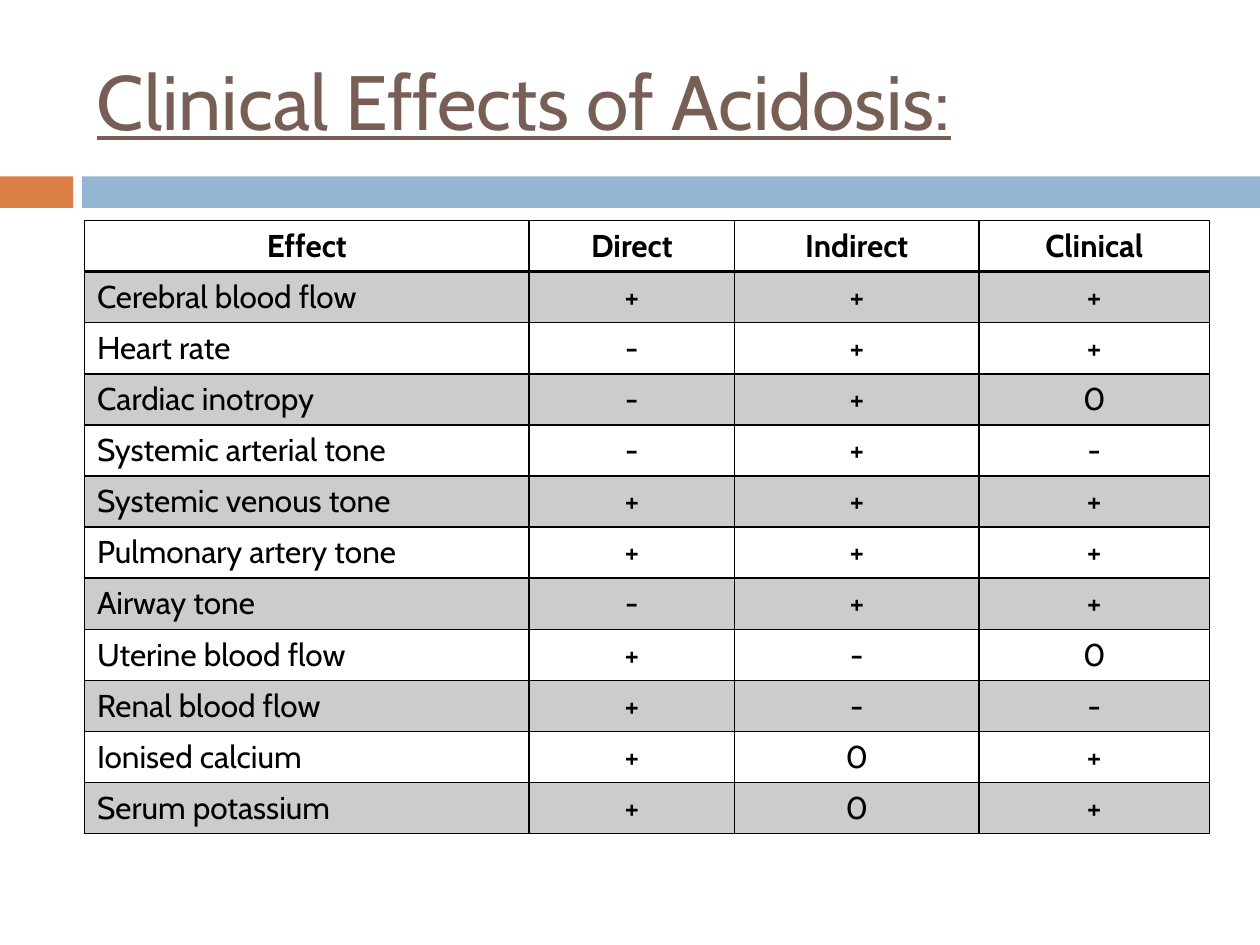
import pptx
import pptx.dml.color
import pptx.enum.shapes
import pptx.enum.text
import pptx.oxml
import pptx.oxml.ns
import pptx.util
from lxml import etree

Inches, Pt = pptx.util.Inches, pptx.util.Pt
RGBColor = pptx.dml.color.RGBColor
ALIGN = pptx.enum.text.PP_ALIGN
MIDDLE = pptx.enum.text.MSO_ANCHOR.MIDDLE
qn = pptx.oxml.ns.qn

BLACK = RGBColor(0x00, 0x00, 0x00)
BROWN = RGBColor(0x77, 0x5F, 0x55)
ORANGE = RGBColor(0xDD, 0x80, 0x47)
BLUE = RGBColor(0x94, 0xB6, 0xD2)

HEADINGS = ("Effect", "Direct", "Indirect", "Clinical")
EFFECTS = [
    ("Cerebral blood flow", "+++"),
    ("Heart rate", "-++"),
    ("Cardiac inotropy", "-+0"),
    ("Systemic arterial tone", "-+-"),
    ("Systemic venous tone", "+++"),
    ("Pulmonary artery tone", "+++"),
    ("Airway tone", "-++"),
    ("Uterine blood flow", "+-0"),
    ("Renal blood flow", "+--"),
    ("Ionised calcium", "+0+"),
    ("Serum potassium", "+0+"),
]
COLUMN_WIDTHS = (3.53, 1.63, 1.94, 1.83)
TABLE_HEIGHT = 4.87
BAND_OPACITY = 20  # percent


class SlideBuilder:
    font_name = "Cabin"

    def __init__(self, slide):
        self.slide = slide

    def add_text(self, frame, text, size, color, align=ALIGN.LEFT, **formats):
        para = frame.paragraphs[0]
        para.alignment = align
        span = para.add_run()
        span.text = text
        span.font.color.rgb = color
        formats.update(name=self.font_name, size=Pt(size))
        for name, value in formats.items():
            setattr(span.font, name, value)

    def bar(self, left, top, width, height, color):
        box = self.slide.shapes.add_shape(
            pptx.enum.shapes.MSO_SHAPE.RECTANGLE,
            Inches(left), Inches(top), Inches(width), Inches(height))
        box.shadow.inherit = False
        box.fill.solid()
        box.fill.fore_color.rgb = color
        box.line.fill.background()

    def title(self, left, top, width, height, text):
        box = self.slide.shapes.add_textbox(
            Inches(left), Inches(top), Inches(width), Inches(height))
        box.text_frame.word_wrap = True
        box.text_frame.vertical_anchor = MIDDLE
        self.add_text(box.text_frame, text, 44, BROWN, underline=True)

    def borders(self, cell, widths):
        properties = cell._tc.get_or_add_tcPr()
        for index, (side, width) in enumerate(widths.items()):
            line = etree.Element(qn(f"a:ln{side}"), w=str(Pt(width)))
            fill = etree.SubElement(line, qn("a:solidFill"))
            etree.SubElement(fill, qn("a:srgbClr"), val=str(BLACK))
            properties.insert(index, line)

    def shade(self, cell, banded):
        if not banded:
            cell.fill.background()
            return
        cell.fill.solid()
        cell.fill.fore_color.rgb = BLACK
        color = cell._tc.tcPr.find(".//" + qn("a:srgbClr"))
        etree.SubElement(color, qn("a:alpha"), val=str(BAND_OPACITY * 1000))

    def table(self, left, top, widths, height, rows):
        table = self.slide.shapes.add_table(
            len(rows), len(widths), Inches(left), Inches(top),
            Inches(sum(widths)), Inches(height)).table
        table.horz_banding = False
        for column, width in zip(table.columns, widths):
            column.width = Inches(width)
        for r, values in enumerate(rows):
            table.rows[r].height = Inches(height / len(rows))
            for c, value in enumerate(values):
                cell = table.cell(r, c)
                align = ALIGN.LEFT if r and c == 0 else ALIGN.CENTER
                self.add_text(cell.text_frame, value, 18, BLACK, align, bold=r == 0)
                self.shade(cell, r % 2 == 1)
                # The rule under the header is heavier
                self.borders(cell, {"L": 1, "R": 1, "T": 2 if r == 1 else 1,
                                    "B": 2 if r == 0 else 1})


def main():
    deck = pptx.Presentation()
    deck.slide_width, deck.slide_height = Inches(10), Inches(7.5)
    page = SlideBuilder(deck.slides.add_slide(deck.slide_layouts[6]))

    # Accent bars
    page.bar(0, 1.4, 0.58, 0.25, ORANGE)
    page.bar(0.65, 1.4, 9.35, 0.25, BLUE)

    # Title
    page.title(0.67, 0.25, 8.92, 1.08, "Clinical Effects of Acidosis:")

    # Table of effects
    rows = [HEADINGS] + [(effect, *signs) for effect, signs in EFFECTS]
    page.table(0.67, 1.75, COLUMN_WIDTHS, TABLE_HEIGHT, rows)

    deck.save("out.pptx")


if __name__ == "__main__":
    main()
